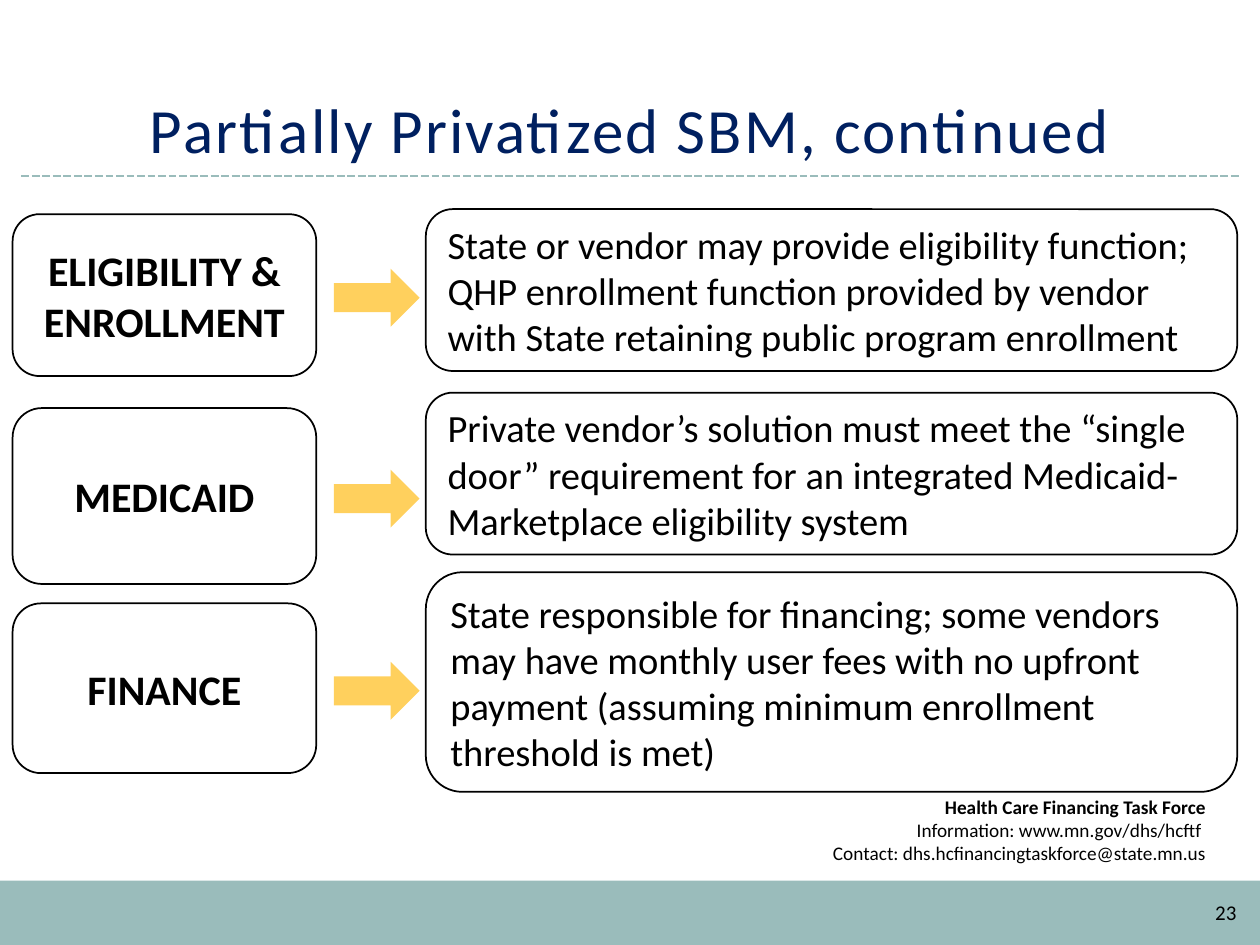
from dataclasses import dataclass

from lxml import etree
from pptx import Presentation
from pptx.dml.color import RGBColor
from pptx.enum.dml import MSO_LINE
from pptx.enum.shapes import MSO_CONNECTOR, MSO_SHAPE
from pptx.enum.text import MSO_ANCHOR, PP_ALIGN
from pptx.oxml.ns import qn
from pptx.util import Pt

LEFT, CENTER, RIGHT = PP_ALIGN.LEFT, PP_ALIGN.CENTER, PP_ALIGN.RIGHT
TOP, MIDDLE, BOTTOM = MSO_ANCHOR.TOP, MSO_ANCHOR.MIDDLE, MSO_ANCHOR.BOTTOM
RECTANGLE, ROUNDED = MSO_SHAPE.RECTANGLE, MSO_SHAPE.ROUNDED_RECTANGLE
RIGHT_ARROW = MSO_SHAPE.RIGHT_ARROW
STRAIGHT = MSO_CONNECTOR.STRAIGHT
SQUARE_DOT = MSO_LINE.SQUARE_DOT

FONT = "Calibri"
COLORS = {
    "teal": "9ABCBB",
    "navy": "002060",
    "gold": "FFD05D",
    "black": "000000",
    "white": "FFFFFF",
}
LABEL_LEFT, LABEL_WIDTH = 7.2, 173.5
ARROW_LEFT, ARROW_WIDTH, ARROW_HEIGHT = 190.8, 48.96, 33.12
DETAIL_LEFT, DETAIL_WIDTH = 243.36, 463.68
BOX_INSETS = (7.92, 4.32)


@dataclass
class Topic:
    label: str
    detail: str
    label_top: float
    label_height: float
    detail_top: float
    detail_height: float


TOPICS = [
    Topic(
        "ELIGIBILITY & ENROLLMENT",
        "State or vendor may provide eligibility function; QHP enrollment function "
        "provided by vendor with State retaining public program enrollment",
        122.4, 92.5, 119.5, 92.5,
    ),
    Topic(
        "MEDICAID",
        "Private vendor’s solution must meet the “single door” requirement for an "
        "integrated Medicaid-Marketplace eligibility system",
        233.2, 100.5, 224.4, 92.5,
    ),
    Topic(
        "FINANCE",
        "State responsible for financing; some vendors may have monthly user fees "
        "with no upfront payment (assuming minimum enrollment threshold is met)",
        344.8, 97, 327, 125.5,
    ),
]


def write_text(shape, text, *, size, color="black", bold_lines=0, align=LEFT,
               anchor=MIDDLE, insets=(7.2, 3.6), line_spacing=None, tracking=None):
    frame = shape.text_frame
    frame.word_wrap = True
    frame.vertical_anchor = anchor
    frame.margin_left = frame.margin_right = Pt(insets[0])
    frame.margin_top = frame.margin_bottom = Pt(insets[1])
    frame.text = text
    for index, paragraph in enumerate(frame.paragraphs):
        paragraph.alignment = align
        if line_spacing:
            paragraph.line_spacing = Pt(line_spacing)
        for run in paragraph.runs:
            run.font.name = FONT
            run.font.size = Pt(size)
            run.font.bold = index < bold_lines
            run.font.color.rgb = RGBColor.from_string(COLORS[color])
            if tracking:
                run.font._element.set("spc", str(round(tracking * 100)))


def add_box(slide, kind, left: float, top: float, width: float, height: float,
            fill: str, outline: str = ""):
    shape = slide.shapes.add_shape(kind, Pt(left), Pt(top), Pt(width), Pt(height))
    shape.shadow.inherit = False
    shape.fill.solid()
    shape.fill.fore_color.rgb = RGBColor.from_string(COLORS[fill])
    if outline:
        shape.line.color.rgb = RGBColor.from_string(COLORS[outline])
        shape.line.width = Pt(1)
    else:
        shape.line.fill.background()
    return shape


def add_divider(slide, left: float, right: float, top: float) -> None:
    connector = slide.shapes.add_connector(STRAIGHT, Pt(left), Pt(top), Pt(right), Pt(top))
    connector.line.color.rgb = RGBColor.from_string(COLORS["teal"])
    connector.line.width = Pt(1.5)
    connector.line.dash_style = SQUARE_DOT
    etree.SubElement(connector._element.spPr, qn("a:effectLst"))


def add_topic(slide, topic: Topic) -> None:
    label = add_box(slide, ROUNDED, LABEL_LEFT, topic.label_top, LABEL_WIDTH,
                    topic.label_height, "white", "black")
    write_text(label, topic.label, size=24, bold_lines=1, align=CENTER, insets=BOX_INSETS)
    arrow_top = topic.label_top + (topic.label_height - ARROW_HEIGHT) / 2
    add_box(slide, RIGHT_ARROW, ARROW_LEFT, arrow_top + 1.5, ARROW_WIDTH, ARROW_HEIGHT, "gold")
    detail = add_box(slide, ROUNDED, DETAIL_LEFT, topic.detail_top, DETAIL_WIDTH,
                     topic.detail_height, "white", "black")
    write_text(detail, topic.detail, size=22, insets=BOX_INSETS)


def main() -> None:
    presentation = Presentation()
    presentation.slide_width, presentation.slide_height = Pt(720), Pt(540)
    slide = presentation.slides.add_slide(presentation.slide_layouts[6])

    add_box(slide, RECTANGLE, 0, 503.2, 720, 36.8, "teal")
    add_divider(slide, 12.24, 707.76, 100.6)
    contact = add_box(slide, RECTANGLE, 326.9, 450.7, 369.4, 48.2, "white")
    write_text(
        contact,
        "Health Care Financing Task Force\n"
        "Information: www.mn.gov/dhs/hcftf \n"
        "Contact: dhs.hcfinancingtaskforce@state.mn.us",
        size=11, bold_lines=1, align=RIGHT, anchor=TOP,
    )

    title = slide.shapes.add_textbox(Pt(24), Pt(15.8), Pt(672), Pt(82.8))
    write_text(title, "Partially Privatized SBM, continued", size=36, color="navy",
               align=CENTER, anchor=BOTTOM, line_spacing=40, tracking=1.2)

    for topic in TOPICS:
        add_topic(slide, topic)

    page_number = slide.shapes.add_textbox(Pt(671.8), Pt(506.9), Pt(41.8), Pt(28.8))
    write_text(page_number, "23", size=12, align=RIGHT)

    presentation.save("out.pptx")


if __name__ == "__main__":
    main()
